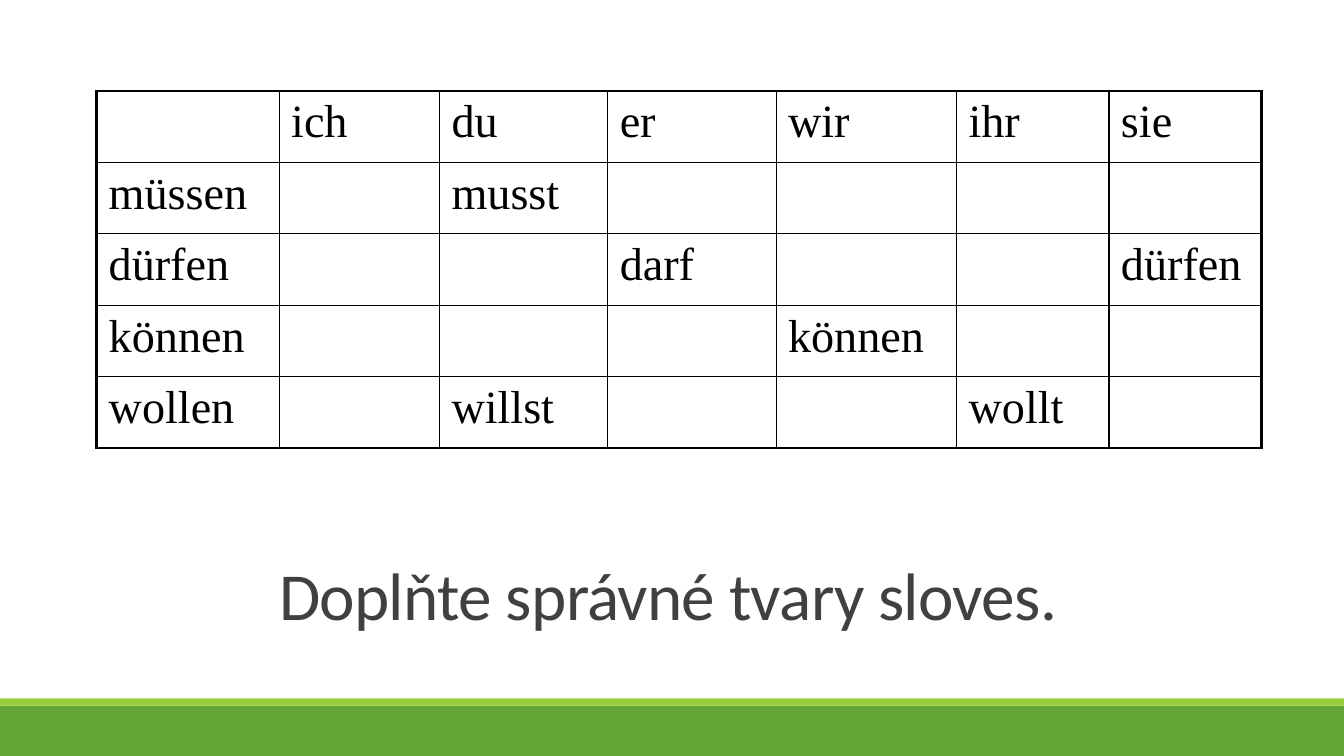
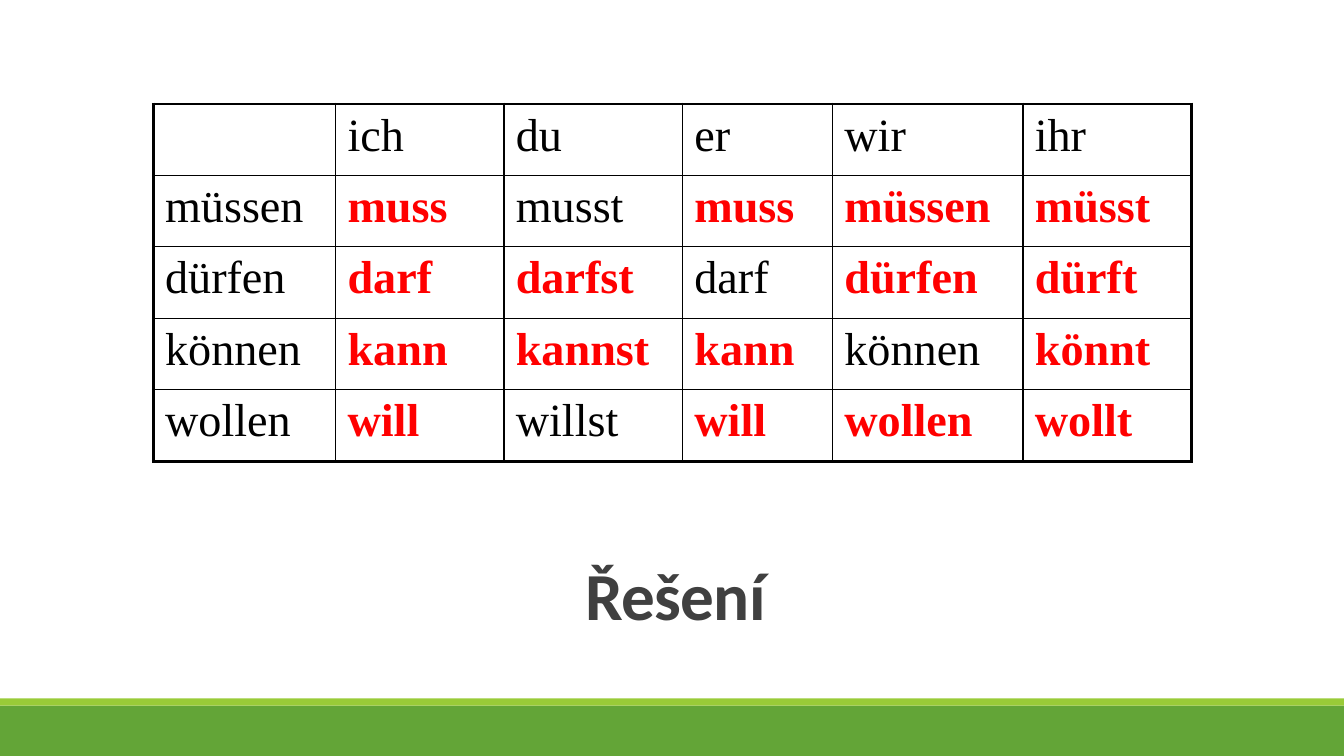
import dataclasses

import lxml.etree
import pptx
import pptx.dml.color
import pptx.enum.shapes
import pptx.enum.text
import pptx.oxml.ns
import pptx.util

Cm = pptx.util.Cm
Pt = pptx.util.Pt

SLIDE_WIDTH, SLIDE_HEIGHT = 33.87, 19.05
ROW_HEIGHT = 1.8
THICK, THIN = 2.25, 1
INK, ANSWER_RED, TITLE_GREY = "000000", "FF0000", "404040"
TITLE_BOX = {"left": Cm(3.05), "top": Cm(13.46), "width": Cm(27.94), "height": Cm(3.3)}
CELL_FORMAT = {
    "margin_left": Cm(0.3),
    "margin_right": Cm(0.3),
    "margin_top": Cm(0.15),
    "margin_bottom": Cm(0.15),
    "vertical_anchor": pptx.enum.text.MSO_ANCHOR.TOP,
}
VERBS = ("müssen", "dürfen", "können", "wollen")


@dataclasses.dataclass(frozen=True)
class Band:
    top: float
    height: float
    color: str


@dataclasses.dataclass(frozen=True)
class VerbTable:
    left: float
    top: float
    columns: tuple[float, ...]
    rows: tuple[tuple[str, ...], ...]
    answers: frozenset[tuple[int, int]] = frozenset()
    left_edge: float = THICK


@dataclasses.dataclass(frozen=True)
class Exercise:
    title: str
    bold: bool
    tables: tuple[VerbTable, ...]


BANDS = (Band(17.78, 1.27, "63A537"), Band(17.6, 0.18, "99CB38"))


def with_verbs(persons: tuple[str, ...], *forms: tuple[str, ...]) -> tuple[tuple[str, ...], ...]:
    """Put the person row on top and the infinitives in the first column."""
    return (("", *persons), *((verb, *row) for verb, row in zip(VERBS, forms)))


PERSONS = ("ich", "du", "er", "wir", "ihr")
GIVEN_FORMS = {(1, 2), (2, 3), (3, 4), (4, 2)}
SOLVED = frozenset((r, c) for r in range(1, 5) for c in range(1, 6)) - GIVEN_FORMS

task_table = VerbTable(
    2.44, 2.29, (4.6, 4.04, 4.24, 4.24, 4.55, 3.84),
    with_verbs(
        PERSONS,
        ("", "musst", "", "", ""),
        ("", "", "darf", "", ""),
        ("", "", "", "können", ""),
        ("", "willst", "", "", "wollt"),
    ),
)
sie_table = VerbTable(
    task_table.left + sum(task_table.columns), task_table.top, (3.84,),
    (("sie",), ("",), ("dürfen",), ("",), ("",)),
    left_edge=THIN,
)
solution_table = VerbTable(
    3.86, 2.62, (4.6, 4.24, 4.5, 3.78, 4.8, 4.24),
    with_verbs(
        PERSONS,
        ("muss", "musst", "muss", "müssen", "müsst"),
        ("darf", "darfst", "darf", "dürfen", "dürft"),
        ("kann", "kannst", "kann", "können", "könnt"),
        ("will", "willst", "will", "wollen", "wollt"),
    ),
    SOLVED,
)
EXERCISES = (
    Exercise("Doplňte správné tvary sloves. ", False, (task_table, sie_table)),
    Exercise("Řešení", True, (solution_table,)),
)


def rgb(color: str) -> pptx.dml.color.RGBColor:
    return pptx.dml.color.RGBColor.from_string(color)


def apply(target, values: dict) -> None:
    for name, value in values.items():
        setattr(target, name, value)


def format_font(font, name: str, size: float, color: str, bold: bool) -> None:
    apply(font, {"name": name, "size": Pt(size), "bold": bold})
    font.color.rgb = rgb(color)


def draw_band(slide, band: Band) -> None:
    strip = slide.shapes.add_shape(
        pptx.enum.shapes.MSO_SHAPE.RECTANGLE,
        0, Cm(band.top), Cm(SLIDE_WIDTH), Cm(band.height),
    )
    strip.shadow.inherit = False
    strip.fill.solid()
    strip.fill.fore_color.rgb = rgb(band.color)
    strip.line.fill.background()


def write_title(slide, exercise: Exercise) -> None:
    title = slide.shapes.title
    apply(title, TITLE_BOX)
    apply(title.text_frame, {
        "word_wrap": True,
        "auto_size": pptx.enum.text.MSO_AUTO_SIZE.NONE,
        "vertical_anchor": pptx.enum.text.MSO_ANCHOR.MIDDLE,
    })
    paragraph = title.text_frame.paragraphs[0]
    apply(paragraph, {"alignment": pptx.enum.text.PP_ALIGN.CENTER, "line_spacing": 0.85})
    run = paragraph.add_run()
    run.text = exercise.title
    format_font(run.font, "Calibri", 48, TITLE_GREY, exercise.bold)
    run.font._element.set("spc", "-50")


def set_borders(cell, weights: dict[str, float]) -> None:
    """Draw cell borders; the keys are L, R, T and B, the values points."""
    properties = cell._tc.get_or_add_tcPr()
    qn = pptx.oxml.ns.qn
    for side, weight in weights.items():
        border = lxml.etree.SubElement(properties, qn(f"a:ln{side}"), w=str(Pt(weight)))
        fill = lxml.etree.SubElement(border, qn("a:solidFill"))
        lxml.etree.SubElement(fill, qn("a:srgbClr"), val=INK)


def draw_table(slide, verb_table: VerbTable) -> None:
    row_count, column_count = len(verb_table.rows), len(verb_table.columns)
    table = slide.shapes.add_table(
        row_count, column_count, Cm(verb_table.left), Cm(verb_table.top),
        Cm(sum(verb_table.columns)), Cm(ROW_HEIGHT * row_count),
    ).table
    apply(table, {"first_row": False, "horz_banding": False})
    for column, width in zip(table.columns, verb_table.columns):
        column.width = Cm(width)
    for r, words in enumerate(verb_table.rows):
        table.rows[r].height = Cm(ROW_HEIGHT)
        for c, word in enumerate(words):
            cell = table.cell(r, c)
            apply(cell, CELL_FORMAT)
            set_borders(cell, {
                "L": verb_table.left_edge if c == 0 else THIN,
                "R": THICK if c == column_count - 1 else THIN,
                "T": THICK if r == 0 else THIN,
                "B": THICK if r == row_count - 1 else THIN,
            })
            cell.fill.background()
            if word:
                is_answer = (r, c) in verb_table.answers
                run = cell.text_frame.paragraphs[0].add_run()
                run.text = word
                format_font(run.font, "Times New Roman", 33,
                            ANSWER_RED if is_answer else INK, is_answer)


def main() -> None:
    deck = pptx.Presentation()
    apply(deck, {"slide_width": Cm(SLIDE_WIDTH), "slide_height": Cm(SLIDE_HEIGHT)})
    title_only = deck.slide_layouts.get_by_name("Title Only")
    for exercise in EXERCISES:
        slide = deck.slides.add_slide(title_only)
        for band in BANDS:
            draw_band(slide, band)
        write_title(slide, exercise)
        for verb_table in exercise.tables:
            draw_table(slide, verb_table)
    deck.save("out.pptx")


if __name__ == "__main__":
    main()
